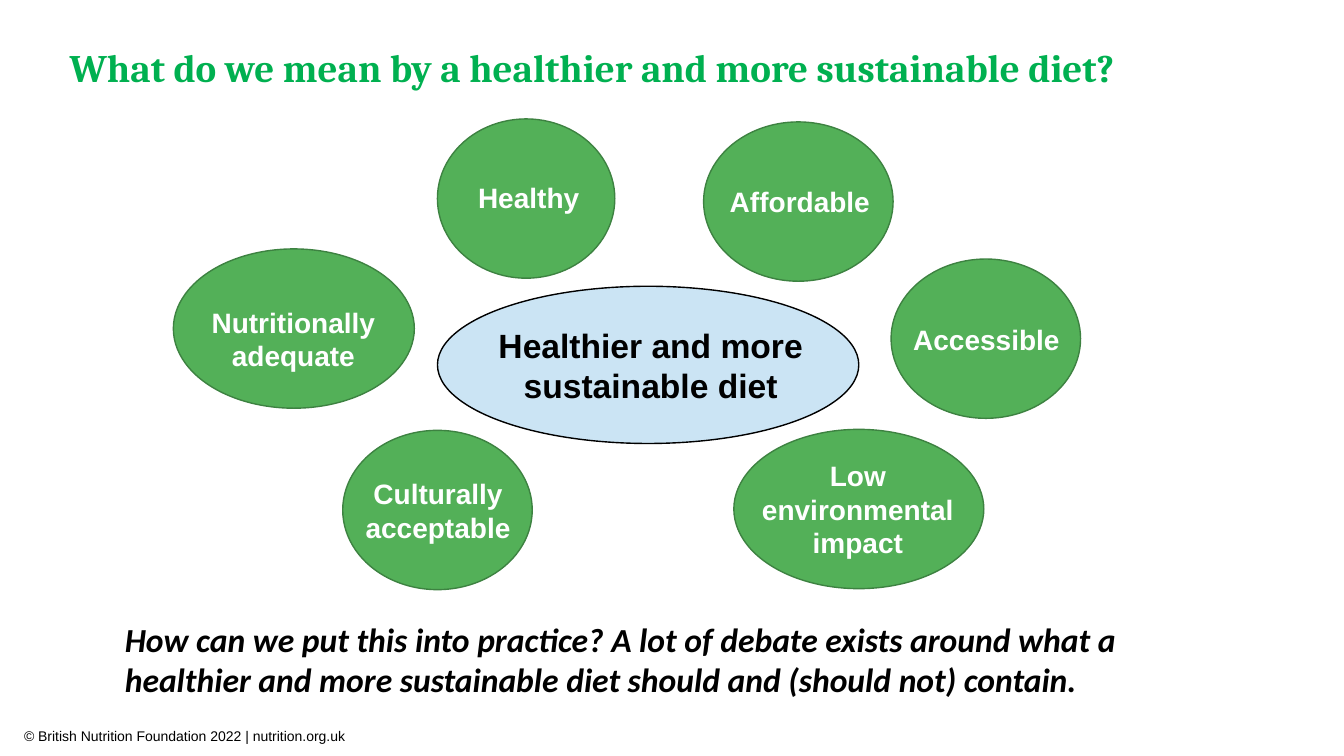
from dataclasses import dataclass

from pptx import Presentation, util as u
from pptx.dml.color import RGBColor
from pptx.enum import shapes, text

WIDE, HIGH = u.Inches(13.333), u.Inches(7.5)
LEFT, MID = text.PP_ALIGN.LEFT, text.PP_ALIGN.CENTER


@dataclass(frozen=True)
class Theme:
    green: str = "53B058"
    edge: str = "3D8241"
    head: str = "00B050"
    sky: str = "CBE4F4"
    black: str = "000000"
    white: str = "FFFFFF"
    title: float = 27.8
    big: float = 24
    label: float = 20
    small: float = 10


@dataclass(frozen=True)
class Box:
    """Left, top, width and height as percentages of the slide."""
    x: float
    y: float
    w: float
    h: float

    def place(self) -> tuple[int, int, int, int]:
        return (round(WIDE * self.x / 100), round(HIGH * self.y / 100),
                round(WIDE * self.w / 100), round(HIGH * self.h / 100))


@dataclass(frozen=True)
class Bubble:
    words: str
    oval: Box
    label: Box
    fill: str
    line: str
    font: dict


T = Theme()
OVAL, PAD, LINE = 21.07, 1.33, 4.48  # heights: small oval, label padding, label line
LABEL = dict(name="Arial", size=T.label, bold=True, color=T.white)
CORE = dict(name="Arial", size=T.big, bold=True, color=T.black)


def green(words: str, x: float, y: float, w: float,
          left: float, top: float, wide: float, lines: int = 1) -> Bubble:
    return Bubble(words, Box(x, y, w, OVAL), Box(left, top, wide, PAD + lines * LINE),
                  T.green, T.edge, LABEL)


BUBBLES = [
    green("Nutritionally adequate", 12.9, 32.93, 17.93, 14.78, 39.73, 14.1, 2),
    green("Healthy", 32.55, 15.73, 13.2, 33.6, 23.2, 11.48),
    green("Affordable", 52.35, 16.13, 14.1, 53.25, 23.73, 12.53),
    green("Culturally acceptable", 25.5, 56.93, 14.1, 26.33, 62.4, 12.53, 2),
    green("Low environmental impact", 54.6, 56.8, 18.6, 55.58, 60, 16.5, 3),
    green("Accessible", 66.3, 34.27, 14.1, 67.13, 42, 12.53),
    Bubble("Healthier and more sustainable diet", Box(32.55, 37.87, 31.35, 20.8),
           Box(34.95, 42.27, 26.93, 12.13), T.sky, T.black, CORE),
]


def write(frame, words: str, font: dict, align=LEFT) -> None:
    frame.text = words
    para = frame.paragraphs[0]
    para.alignment = align
    run = para.runs[0].font
    for key, value in font.items():
        if key == "color":
            run.color.rgb = RGBColor.from_string(value)
        else:
            setattr(run, key, u.Pt(value) if key == "size" else value)


def add_text(slide, box: Box, words: str, font: dict, align=LEFT) -> None:
    frame = slide.shapes.add_textbox(*box.place()).text_frame
    frame.word_wrap = True
    frame.auto_size = text.MSO_AUTO_SIZE.SHAPE_TO_FIT_TEXT
    write(frame, words, font, align)


def add_bubble(slide, item: Bubble) -> None:
    oval = slide.shapes.add_shape(shapes.MSO_SHAPE.OVAL, *item.oval.place())
    oval.shadow.inherit = False
    oval.fill.solid()
    oval.fill.fore_color.rgb = RGBColor.from_string(item.fill)
    oval.line.color.rgb = RGBColor.from_string(item.line)
    oval.line.width = u.Pt(1)
    add_text(slide, item.label, item.words, item.font, MID)


def add_title(slide, box: Box, words: str, font: dict) -> None:
    title = slide.shapes.title
    title.left, title.top, title.width, title.height = box.place()
    frame = title.text_frame
    form = dict(word_wrap=True, auto_size=text.MSO_AUTO_SIZE.NONE,
                vertical_anchor=text.MSO_ANCHOR.BOTTOM)
    for key, value in form.items():
        setattr(frame, key, value)
    write(frame, words, font)
    frame.paragraphs[0].line_spacing = 0.9


def main() -> None:
    deck = Presentation()
    deck.slide_width, deck.slide_height = WIDE, HIGH
    slide = deck.slides.add_slide(deck.slide_layouts[5])

    # Title
    add_title(slide, Box(4.43, 3.33, 91.13, 9.33),
              "What do we mean by a healthier and more sustainable diet?",
              dict(name="Cambria", size=T.title, bold=True, color=T.head))

    # Ring of qualities around the core idea
    for item in BUBBLES:
        add_bubble(slide, item)

    # Question and footer
    add_text(slide, Box(8.55, 81.2, 82.95, 17.47),
             "How can we put this into practice? A lot of debate exists around what a "
             "healthier and more sustainable diet should and (should not) contain.",
             dict(name="Calibri", size=T.big, bold=True, italic=True, color=T.black))
    add_text(slide, Box(1.05, 95.6, 28.65, 7.6),
             "© British Nutrition Foundation 2022 | nutrition.org.uk",
             dict(name="Arial", size=T.small, color=T.black))

    deck.save("out.pptx")


if __name__ == "__main__":
    main()
